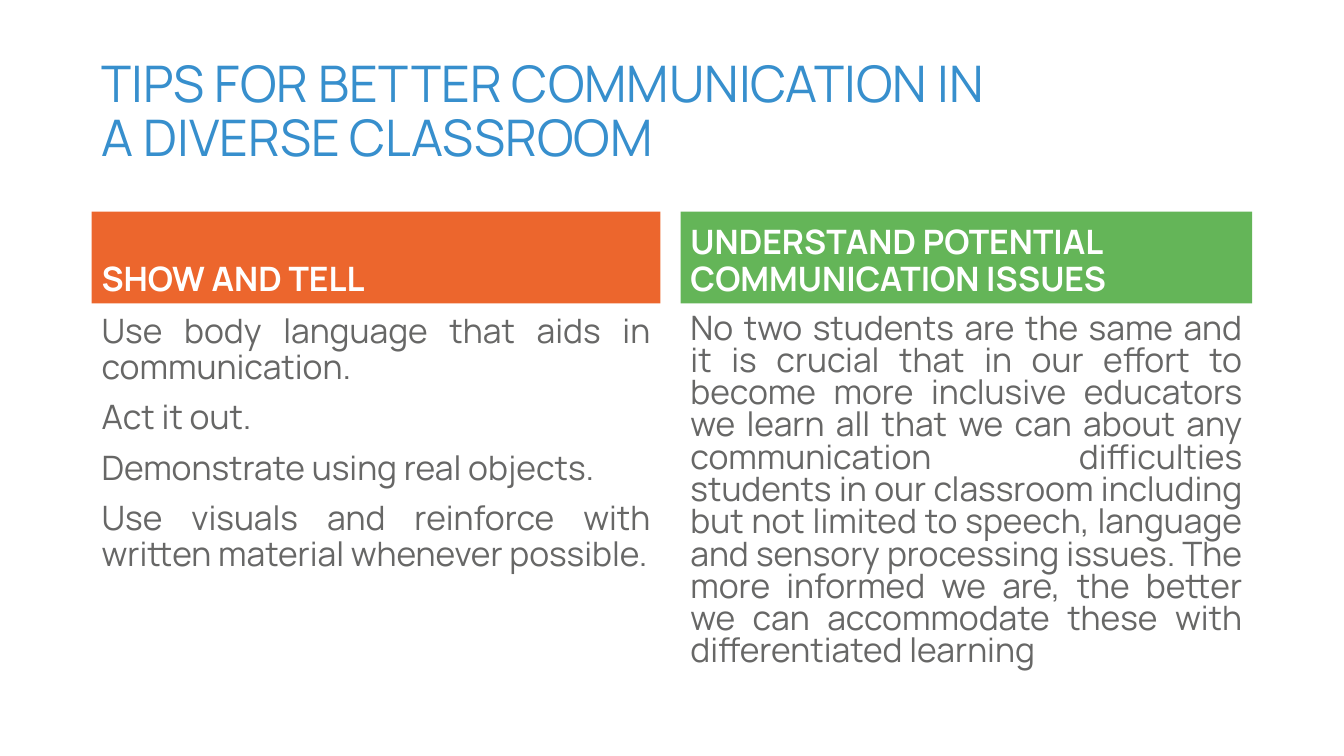
from pptx import Presentation
from pptx.dml.color import RGBColor
from pptx.enum.shapes import MSO_SHAPE as SHAPE
from pptx.enum.text import MSO_ANCHOR as ANCHOR, PP_ALIGN as ALIGN
from pptx.util import Inches, Pt

COLORS = {"title": "378FCD", "body": "676766", "white": "FFFFFF",
          "orange": "EC662D", "green": "64B558"}

prs = Presentation()
prs.slide_width, prs.slide_height = Inches(13.33), Inches(7.5)
s = prs.slides.add_slide(prs.slide_layouts[6])


def add_text(lines, box, fill=None, color="body", size=24, bold=False,
             align=ALIGN.LEFT, anchor=ANCHOR.TOP, spacing=0.9):
    box = [Inches(v) for v in box]
    if fill:
        sp = s.shapes.add_shape(SHAPE.RECTANGLE, *box)
        sp.shadow.inherit = False
        sp.fill.solid()
        sp.fill.fore_color.rgb = RGBColor.from_string(COLORS[fill])
        sp.line.fill.background()
    else:
        sp = s.shapes.add_textbox(*box)
    tf = sp.text_frame
    tf.word_wrap = True
    tf.vertical_anchor = anchor
    for i, line in enumerate(lines):
        p = tf.paragraphs[0] if i == 0 else tf.add_paragraph()
        p.alignment = align
        p.line_spacing = spacing
        p.space_before = Pt(10 if i else 0)
        r = p.add_run()
        r.text = line
        r.font.name, r.font.size, r.font.bold = "Manrope", Pt(size), bold
        r.font.color.rgb = RGBColor.from_string(COLORS[color])


# Title
add_text(["TIPS FOR BETTER COMMUNICATION IN A DIVERSE CLASSROOM"],
         (0.91, 0.4, 9.36, 1.45), color="title", size=36, anchor=ANCHOR.MIDDLE)

# Two columns: left, width, header colour, header, body spacing, body
columns = [
    (0.91, 5.64, "orange", "SHOW AND TELL", 0.9, [
        "Use body language that aids in communication.",
        "Act it out.",
        "Demonstrate using real objects.",
        "Use visuals and reinforce with written material whenever possible.",
    ]),
    (6.75, 5.67, "green", "UNDERSTAND POTENTIAL COMMUNICATION ISSUES", 0.8, [
        "No two students are the same and it is crucial that in our effort to "
        "become more inclusive educators we learn all that we can about any "
        "communication difficulties students in our classroom including but "
        "not limited to speech, language and sensory processing issues. The "
        "more informed we are, the better we can accommodate these with "
        "differentiated learning",
    ]),
]
for left, width, fill, header, spacing, body in columns:
    add_text([header], (left, 2.1, width, 0.91), fill=fill, color="white",
             bold=True, anchor=ANCHOR.BOTTOM)
    add_text(body, (left, 3.07, width, 4.03), align=ALIGN.JUSTIFY,
             spacing=spacing)

prs.save("out.pptx")
